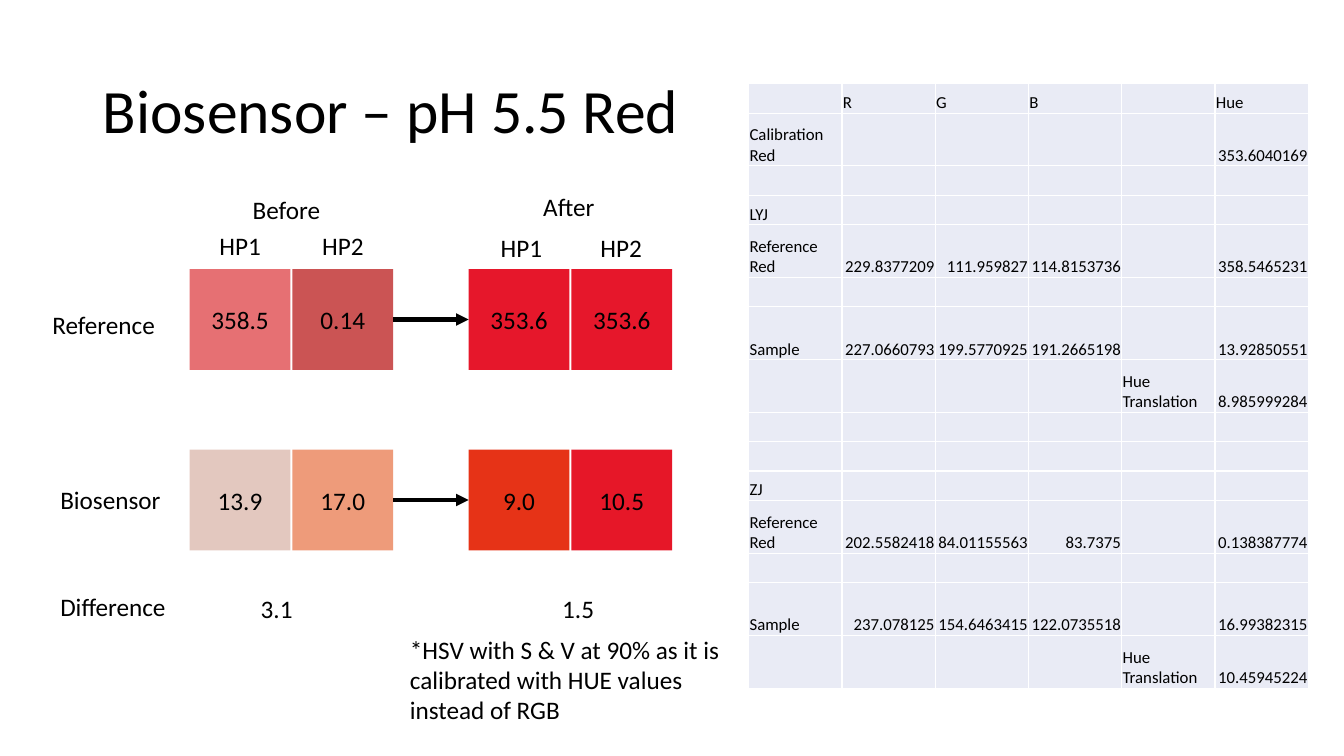
from dataclasses import dataclass

from lxml.etree import SubElement
from pptx import Presentation
from pptx.dml.color import RGBColor
from pptx.enum.shapes import MSO_CONNECTOR, MSO_SHAPE
from pptx.enum.text import MSO_ANCHOR, MSO_AUTO_SIZE, PP_ALIGN
from pptx.oxml import parse_xml
from pptx.oxml.ns import nsdecls, qn
from pptx.shapes.autoshape import Shape
from pptx.slide import Slide
from pptx.table import _Cell
from pptx.util import Cm, Pt


@dataclass(frozen=True)
class Theme:
    font: str = "Calibri"
    ink: str = "000000"
    cell_fill: str = "E9EBF5"
    cell_border: str = "FFFFFF"
    title_size: int = 44
    label_size: int = 18
    table_size: int = 12
    arrow_width: int = 3


@dataclass(frozen=True)
class Label:
    text: str
    left: float
    top: float
    width: float
    height: float = 1.02
    wrap: bool = False


@dataclass(frozen=True)
class Swatch:
    hue: str
    color: str


@dataclass(frozen=True)
class SwatchRow:
    top: float
    swatches: tuple[Swatch, ...]


THEME = Theme()
SWATCH_SIDE = 2.54
SWATCH_LEFTS = (4.78, 7.37, 11.81, 14.4)
LAST_BEFORE, FIRST_AFTER = 1, 2
RIGHT_SIDE, LEFT_SIDE = 3, 1

SWATCH_ROWS = (
    SwatchRow(6.78, (Swatch("358.5", "E67073"), Swatch("0.14", "CB5454"),
                     Swatch("353.6", "E6172B"), Swatch("353.6", "E6172B"))),
    SwatchRow(11.33, (Swatch("13.9", "E3C8BF"), Swatch("17.0", "EE9B7A"),
                      Swatch("9.0", "E63317"), Swatch("10.5", "E61728"))),
)

LABELS = (
    Label("Before", 6.12, 4.78, 2.24),
    Label("After", 13.44, 4.7, 1.83),
    Label("HP1", 5.28, 5.69, 1.57),
    Label("HP2", 7.87, 5.69, 1.57),
    Label("HP1", 12.37, 5.74, 1.57),
    Label("HP2", 14.88, 5.74, 1.57),
    Label("Reference", 1.07, 7.67, 3.12),
    Label("Biosensor", 1.27, 12.07, 3.07),
    Label("Difference", 1.27, 14.78, 3.2),
    Label("3.1", 6.32, 14.83, 1.32),
    Label("1.5", 13.92, 14.83, 1.32),
    Label("*HSV with S & V at 90% as it is calibrated with HUE values instead of RGB",
          10.08, 15.85, 8.53, 2.57, wrap=True),
)

EMPTY_ROW = ("",) * 6
HUE_ROWS = (
    ("", "R", "G", "B", "", "Hue"),
    ("Calibration Red", "", "", "", "", "353.6040169"),
    EMPTY_ROW,
    ("LYJ", "", "", "", "", ""),
    ("Reference Red", "229.8377209", "111.959827", "114.8153736", "", "358.5465231"),
    EMPTY_ROW,
    ("Sample", "227.0660793", "199.5770925", "191.2665198", "", "13.92850551"),
    ("", "", "", "", "Hue Translation", "8.985999284"),
    EMPTY_ROW,
    EMPTY_ROW,
    ("ZJ", "", "", "", "", ""),
    ("Reference Red", "202.5582418", "84.01155563", "83.7375", "", "0.138387774"),
    EMPTY_ROW,
    ("Sample", "237.078125", "154.6463415", "122.0735518", "", "16.99382315"),
    ("", "", "", "", "Hue Translation", "10.45945224"),
)
TABLE_LEFT, TABLE_TOP, COLUMN_WIDTH = 18.87, 2.11, 2.35
SHORT_ROW, TALL_ROW = 0.74, 1.33


def is_number(text: str) -> bool:
    return text[:1].isdigit()


def style_paragraph(paragraph, size: int, align: PP_ALIGN = PP_ALIGN.LEFT) -> None:
    paragraph.alignment = align
    paragraph.font.name = THEME.font
    paragraph.font.size = Pt(size)
    paragraph.font.color.rgb = RGBColor.from_string(THEME.ink)


def add_title(slide: Slide, text: str) -> None:
    title = slide.shapes.title
    title.left, title.top, title.width, title.height = Cm(2.34), Cm(1.02), Cm(29.21), Cm(3.68)
    title.text_frame.text = text
    title.text_frame.vertical_anchor = MSO_ANCHOR.MIDDLE
    heading = title.text_frame.paragraphs[0]
    heading.line_spacing = 0.9
    style_paragraph(heading, THEME.title_size)


def add_label(slide: Slide, label: Label) -> None:
    box = slide.shapes.add_textbox(Cm(label.left), Cm(label.top), Cm(label.width), Cm(label.height))
    frame = box.text_frame
    frame.text = label.text
    frame.word_wrap = label.wrap
    frame.auto_size = MSO_AUTO_SIZE.SHAPE_TO_FIT_TEXT
    style_paragraph(frame.paragraphs[0], THEME.label_size)


def add_swatch(slide: Slide, swatch: Swatch, left: float, top: float) -> Shape:
    square = slide.shapes.add_shape(
        MSO_SHAPE.RECTANGLE, Cm(left), Cm(top), Cm(SWATCH_SIDE), Cm(SWATCH_SIDE))
    square.shadow.inherit = False
    square.fill.solid()
    square.fill.fore_color.rgb = RGBColor.from_string(swatch.color)
    square.line.fill.background()
    square.text_frame.text = swatch.hue
    square.text_frame.vertical_anchor = MSO_ANCHOR.MIDDLE
    style_paragraph(square.text_frame.paragraphs[0], THEME.label_size, PP_ALIGN.CENTER)
    return square


def add_arrow(slide: Slide, before: Shape, after: Shape) -> None:
    arrow = slide.shapes.add_connector(MSO_CONNECTOR.STRAIGHT, 0, 0, 0, 0)
    arrow.begin_connect(before, RIGHT_SIDE)
    arrow.end_connect(after, LEFT_SIDE)
    arrow.line.color.rgb = RGBColor.from_string(THEME.ink)
    arrow.line.width = Pt(THEME.arrow_width)
    SubElement(arrow.line._get_or_add_ln(), qn("a:tailEnd"), type="triangle")
    SubElement(arrow._element.spPr, qn("a:effectLst"))


def add_swatch_row(slide: Slide, row: SwatchRow) -> None:
    squares = [add_swatch(slide, swatch, left, row.top)
               for swatch, left in zip(row.swatches, SWATCH_LEFTS)]
    add_arrow(slide, squares[LAST_BEFORE], squares[FIRST_AFTER])


def set_cell_borders(cell: _Cell) -> None:
    properties = cell._tc.get_or_add_tcPr()
    for position, side in enumerate(("lnL", "lnR", "lnT", "lnB")):
        properties.insert(position, parse_xml(
            f'<a:{side} {nsdecls("a")} w="{Pt(1)}"><a:solidFill>'
            f'<a:srgbClr val="{THEME.cell_border}"/></a:solidFill></a:{side}>'))


def fill_cell(cell: _Cell, text: str) -> None:
    cell.text = text
    cell.vertical_anchor = MSO_ANCHOR.BOTTOM
    cell.margin_left = cell.margin_right = cell.margin_top = Cm(0.02)
    cell.margin_bottom = 0
    cell.fill.solid()
    cell.fill.fore_color.rgb = RGBColor.from_string(THEME.cell_fill)
    set_cell_borders(cell)
    style_paragraph(cell.text_frame.paragraphs[0], THEME.table_size,
                    PP_ALIGN.RIGHT if is_number(text) else PP_ALIGN.LEFT)


def add_hue_table(slide: Slide) -> None:
    """Draw the readings; rows that end in a hue value are tall."""
    heights = [TALL_ROW if is_number(row[-1]) else SHORT_ROW for row in HUE_ROWS]
    column_count = len(EMPTY_ROW)
    table = slide.shapes.add_table(
        len(HUE_ROWS), column_count, Cm(TABLE_LEFT), Cm(TABLE_TOP),
        Cm(COLUMN_WIDTH * column_count), Cm(sum(heights))).table
    table.first_row = table.horz_banding = False
    for column in table.columns:
        column.width = Cm(COLUMN_WIDTH)
    for table_row, height, readings in zip(table.rows, heights, HUE_ROWS):
        table_row.height = Cm(height)
        for cell, reading in zip(table_row.cells, readings):
            fill_cell(cell, reading)


def main() -> None:
    presentation = Presentation()
    presentation.slide_width, presentation.slide_height = Cm(33.87), Cm(19.05)
    slide = presentation.slides.add_slide(presentation.slide_layouts.get_by_name("Title Only"))
    add_title(slide, "Biosensor – pH 5.5 Red")
    for row in SWATCH_ROWS:
        add_swatch_row(slide, row)
    add_hue_table(slide)
    for label in LABELS:
        add_label(slide, label)
    presentation.save("out.pptx")


if __name__ == "__main__":
    main()
